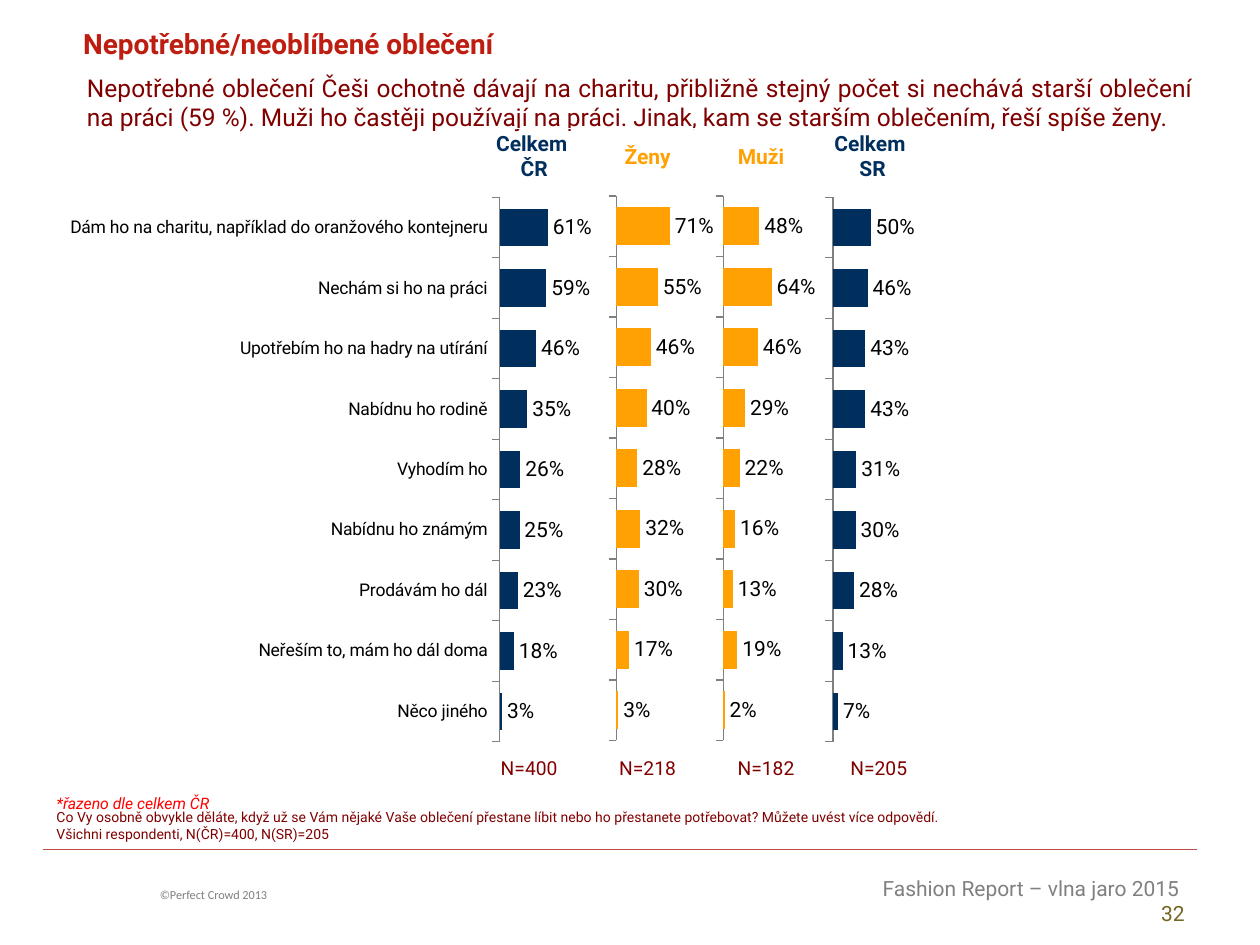
"""Build the slide on what people do with unwanted clothes."""
from lxml import etree
from pptx import Presentation
from pptx.chart.data import CategoryChartData
from pptx.dml.color import RGBColor
from pptx.enum import chart as ch, shapes, text
from pptx.oxml.ns import qn
from pptx.util import Inches, Pt

NAVY = RGBColor(0x00, 0x2F, 0x5E)
ORANGE = RGBColor(0xFF, 0xA1, 0x02)
MAROON = RGBColor(0x80, 0x00, 0x00)
CRIMSON = RGBColor(0xBE, 0x1E, 0x11)
RED = RGBColor(0xFF, 0x00, 0x00)
RULE = RGBColor(0xBF, 0x4C, 0x48)
GREY = RGBColor(0x80, 0x80, 0x80)
OLIVE = RGBColor(0x75, 0x65, 0x22)
BLACK = RGBColor(0x00, 0x00, 0x00)

LEFT, CENTER = text.PP_ALIGN.LEFT, text.PP_ALIGN.CENTER
RIGHT, JUSTIFY = text.PP_ALIGN.RIGHT, text.PP_ALIGN.JUSTIFY

ANSWERS = [
    "Něco jiného", "Neřeším to, mám ho dál doma", "Prodávám ho dál",
    "Nabídnu ho známým", "Vyhodím ho", "Nabídnu ho rodině",
    "Upotřebím ho na hadry na utírání", "Nechám si ho na práci",
    "Dám ho na charitu, například do oranžového kontejneru",
]
TOTAL_CZ = [3, 18, 23, 25, 26, 35, 46, 59, 61]
WOMEN = [3, 17, 30, 32, 28, 40, 46, 55, 71]
MEN = [2, 19, 13, 16, 22, 29, 46, 64, 48]
TOTAL_SK = [7, 13, 28, 30, 31, 43, 43, 46, 50]


class Report:
    """Hold the font and the slide, and add styled elements to it."""

    def __init__(self, slide, face="Roboto"):
        self.slide = slide
        self.face = face

    def style(self, font, size, color, bold=False, italic=False, face=None):
        font.name, font.size = face or self.face, Pt(size)
        font.bold, font.italic = bold, italic
        font.color.rgb = color

    def fill_text(self, frame, wording, size, color, align=LEFT, **looks):
        frame.text = wording
        for paragraph in frame.paragraphs:
            paragraph.alignment = align
            for run in paragraph.runs:
                self.style(run.font, size, color, **looks)

    def placeholder(self, holder, box, wording, size, color, align=LEFT, **looks):
        holder.left, holder.top, holder.width, holder.height = map(Inches, box)
        frame = holder.text_frame
        frame.auto_size = text.MSO_AUTO_SIZE.NONE
        frame.vertical_anchor = text.MSO_ANCHOR.TOP
        self.fill_text(frame, wording, size, color, align, **looks)
        paragraph = frame.paragraphs[0]
        props = paragraph._p.get_or_add_pPr()
        props.set("marL", "0")
        props.set("indent", "0")
        etree.SubElement(props, qn("a:buNone"))
        paragraph.space_before = Pt(0)

    def note(self, box, wording, size, color, align=LEFT, wrap=True, **looks):
        frame = self.slide.shapes.add_textbox(*map(Inches, box)).text_frame
        frame.word_wrap = wrap
        frame.auto_size = text.MSO_AUTO_SIZE.SHAPE_TO_FIT_TEXT
        self.fill_text(frame, wording, size, color, align, **looks)
        return frame

    def rule(self, left, right, top, color):
        line = self.slide.shapes.add_connector(
            shapes.MSO_CONNECTOR.STRAIGHT, *map(Inches, (left, top, right, top)))
        line.line.color.rgb = color
        line.line.width = Pt(0.75)
        etree.SubElement(line._element.spPr, qn("a:effectLst"))

    def row(self, left, top, widths, height, entries, size, bold=False):
        table = self.slide.shapes.add_table(
            1, len(widths), *map(Inches, (left, top, sum(widths), height))).table
        table.first_row = table.horz_banding = False
        table.rows[0].height = Inches(height)
        for index, (width, (wording, color)) in enumerate(zip(widths, entries)):
            table.columns[index].width = Inches(width)
            cell = table.cell(0, index)
            cell.fill.background()
            cell.vertical_anchor = text.MSO_ANCHOR.MIDDLE
            cell.margin_left = cell.margin_right = cell.margin_top = Inches(0.01)
            cell.margin_bottom = 0
            self.fill_text(cell.text_frame, wording, size, color, CENTER, bold=bold)

    def bars(self, box, plot_left, plot_width, values, color, answers=None):
        data = CategoryChartData(number_format="0")
        data.categories = answers or [str(n + 1) for n in range(len(values))]
        data.add_series("Series 1", values)
        chart = self.slide.shapes.add_chart(
            ch.XL_CHART_TYPE.BAR_CLUSTERED, *map(Inches, box), data).chart
        chart.has_legend = chart.has_title = False
        self.style(chart.font, 12, BLACK)

        scale = chart.value_axis
        scale.minimum_scale, scale.maximum_scale = 0, 100
        scale.has_major_gridlines = scale.visible = False
        axis = chart.category_axis
        axis.major_tick_mark = ch.XL_TICK_MARK.OUTSIDE
        axis.format.line.color.rgb = GREY
        self.style(axis.tick_labels.font, 10 if answers else 11, BLACK)
        if not answers:
            axis.tick_label_position = ch.XL_TICK_LABEL_POSITION.NONE

        plot = chart.plots[0]
        plot.gap_width, plot.vary_by_categories = 60, False
        fill = plot.series[0].format.fill
        fill.solid()
        fill.fore_color.rgb = color
        plot.has_data_labels = True
        labels = plot.data_labels
        labels.show_value = True
        labels.number_format, labels.number_format_is_linked = '#,##0"%"', False
        labels.position = ch.XL_LABEL_POSITION.OUTSIDE_END
        self.style(labels.font, 12, BLACK)
        self.place_plot(chart, plot_left, 0.065, plot_width, 0.859)

    def place_plot(self, chart, x, y, w, h):
        area = chart._chartSpace.chart.plotArea
        for old in area.findall(qn("c:layout")):
            area.remove(old)
        layout = etree.Element(qn("c:layout"))
        area.insert(0, layout)
        manual = etree.SubElement(layout, qn("c:manualLayout"))
        settings = {"layoutTarget": "inner", "xMode": "edge", "yMode": "edge",
                    "x": x, "y": y, "w": w, "h": h}
        for tag, value in settings.items():
            etree.SubElement(manual, qn(f"c:{tag}")).set("val", str(value))


def main():
    deck = Presentation()
    deck.slide_width, deck.slide_height = Inches(10), Inches(7.5)
    slide = deck.slides.add_slide(deck.slide_layouts[1])
    report = Report(slide)

    report.rule(0.34, 9.5, 6.74, RULE)
    report.note((1.17, 6.99, 2.91, 0.22), "©Perfect Crowd 2013", 7, GREY, face="Calibri")
    footer = report.note((5.79, 6.9, 3.71, 0.5),
                         "Fashion Report – vlna jaro 2015 \v32", 12, GREY, RIGHT)
    footer.paragraphs[0].runs[-1].font.color.rgb = OLIVE

    report.row(3.79, 1.02, [0.9, 0.9, 0.9, 0.87], 0.44,
               [("Celkem \nČR", NAVY), ("Ženy", ORANGE),
                ("Muži", ORANGE), ("Celkem \nSR", NAVY)], 12, bold=True)

    report.bars((5.16, 1.24, 2.33, 5.03), 0.623, 0.258, TOTAL_SK, NAVY)
    report.bars((4.3, 1.23, 2.33, 5.03), 0.618, 0.258, MEN, ORANGE)
    report.bars((3.44, 1.23, 2.33, 5.03), 0.623, 0.258, WOMEN, ORANGE)
    report.bars((0.2, 1.24, 4.68, 5.03), 0.805, 0.134, TOTAL_CZ, NAVY, ANSWERS)

    report.placeholder(slide.shapes.title, (0.56, 0.16, 7.51, 0.37),
                       "Nepotřebné/neoblíbené oblečení", 16, CRIMSON, bold=True)
    report.placeholder(
        slide.placeholders[1], (0.59, 0.53, 8.98, 0.81),
        "Nepotřebné oblečení Češi ochotně dávají na charitu, přibližně stejný počet "
        "si nechává starší oblečení na práci (59 %). Muži ho častěji používají na "
        "práci. Jinak, kam se starším oblečením, řeší spíše ženy. ", 14, MAROON, JUSTIFY)
    report.note(
        (0.35, 6.37, 9.06, 0.37),
        "Co Vy osobně obvykle děláte, když už se Vám nějaké Vaše oblečení přestane "
        "líbit nebo ho přestanete potřebovat? Můžete uvést více odpovědí.\n"
        "Všichni respondenti, N(ČR)=400, N(SR)=205", 8, MAROON)
    report.row(3.73, 5.99, [0.94, 0.94, 0.94, 0.85], 0.21,
               [(f"N={size}", MAROON) for size in (400, 218, 182, 205)], 11)
    report.note((0.35, 6.25, 1.53, 0.25), "*řazeno dle celkem ČR", 9, RED,
                wrap=False, italic=True)

    deck.save("out.pptx")


if __name__ == "__main__":
    main()
